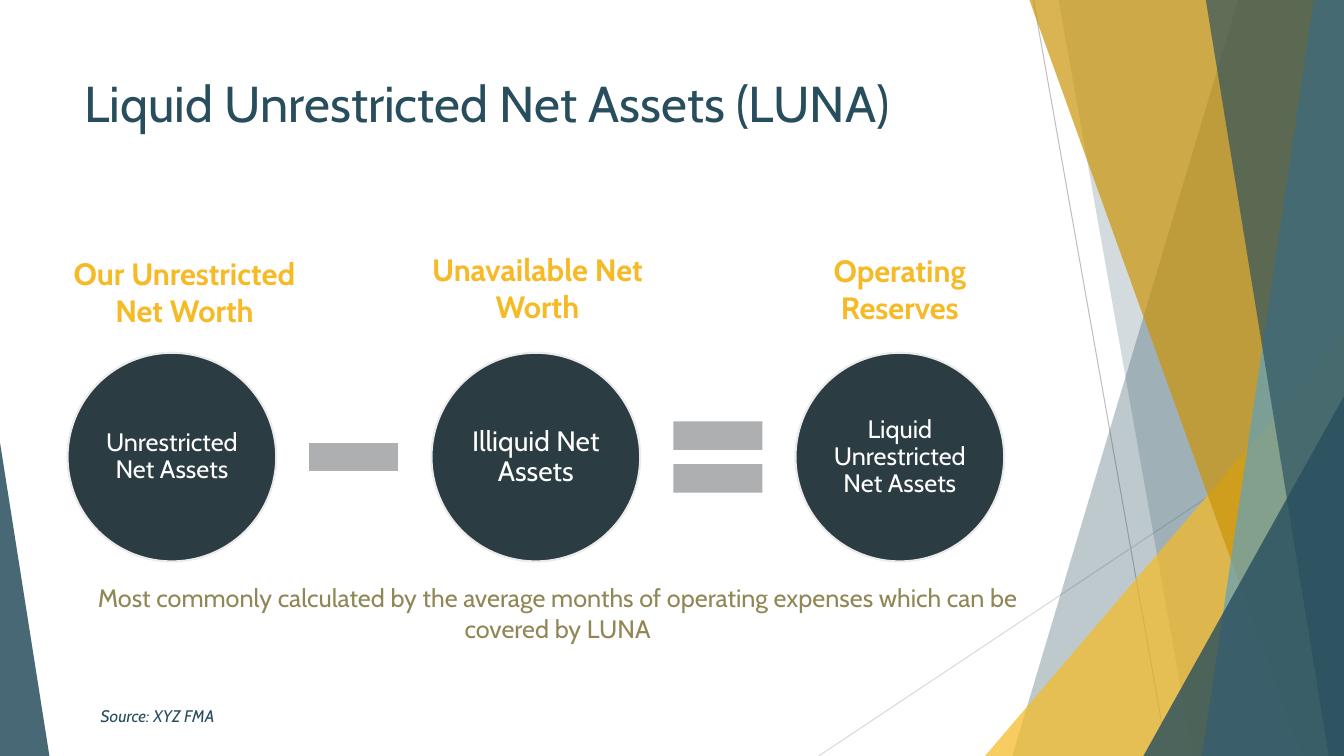
from lxml.etree import SubElement
from pptx import Presentation
from pptx.dml.color import RGBColor
from pptx.enum.shapes import MSO_CONNECTOR, MSO_SHAPE
from pptx.enum.text import MSO_ANCHOR, PP_ALIGN
from pptx.oxml.ns import qn
from pptx.util import Inches, Pt

TEAL = RGBColor(0x28, 0x4E, 0x5E)
SKY = RGBColor(0x61, 0xA1, 0xBC)
GOLD = RGBColor(0xF5, 0xBA, 0x26)
DARK_GOLD = RGBColor(0xCB, 0x94, 0x09)
OLIVE = RGBColor(0x91, 0x86, 0x55)
SLATE = RGBColor(0x2C, 0x3C, 0x43)
GREY = RGBColor(0xAD, 0xAF, 0xB0)
RIM = RGBColor(0xEB, 0xEB, 0xEB)
RULE = RGBColor(0xBF, 0xBF, 0xBF)
PALE_RULE = RGBColor(0xD9, 0xD9, 0xD9)
WHITE = RGBColor(0xFF, 0xFF, 0xFF)

WIDTH, HEIGHT = 13.33, 7.5


class SlideBuilder:
    font = "Cabin"

    def __init__(self, slide):
        self.s = slide

    def line(self, start, end, color):
        ends = [Inches(v) for v in (*start, *end)]
        c = self.s.shapes.add_connector(MSO_CONNECTOR.STRAIGHT, *ends)
        c.line.color.rgb = color
        c.line.width = Pt(0.75)
        SubElement(c._element.spPr, qn("a:effectLst"))

    def paint(self, sp, color, opacity=100):
        sp.shadow.inherit = False
        sp.fill.solid()
        sp.fill.fore_color.rgb = color
        sp.line.fill.background()
        if opacity < 100:
            clr = sp._element.spPr.find(qn("a:solidFill"))[0]
            SubElement(clr, qn("a:alpha"), val=str(opacity * 1000))

    def shape(self, kind, box, color, opacity=100, adj=None):
        sp = self.s.shapes.add_shape(kind, *[Inches(v) for v in box])
        if adj is not None:
            sp.adjustments[0] = adj
        self.paint(sp, color, opacity)
        return sp

    def band(self, top_x, bottom_x, color, opacity):
        """Full-height band from a slanted left edge to the slide's right edge."""
        corners = [(WIDTH, 0), (WIDTH, HEIGHT), (bottom_x, HEIGHT)]
        fb = self.s.shapes.build_freeform(Inches(top_x), 0)
        fb.add_line_segments([(Inches(x), Inches(y)) for x, y in corners])
        self.paint(fb.convert_to_shape(), color, opacity)

    def fill_text(self, tf, text, size, color, align=PP_ALIGN.CENTER,
                  anchor=MSO_ANCHOR.TOP, bold=False, italic=False):
        tf.word_wrap = True
        tf.vertical_anchor = anchor
        p = tf.paragraphs[0]
        p.alignment = align
        r = p.add_run()
        r.text = text
        r.font.name = self.font
        r.font.size = Pt(size)
        r.font.color.rgb = color
        r.font.bold = bold
        r.font.italic = italic
        return p

    def text(self, box, text, size, color, **style):
        sp = self.s.shapes.add_textbox(*[Inches(v) for v in box])
        self.fill_text(sp.text_frame, text, size, color, **style)

    def circle(self, left, top, size, text, points):
        sp = self.shape(MSO_SHAPE.OVAL, (left, top, size, size), SLATE)
        sp.line.color.rgb = RIM
        sp.line.width = Pt(1.5)
        tf = sp.text_frame
        tf.margin_left = tf.margin_right = Inches(0.03)
        tf.margin_top = tf.margin_bottom = Inches(0.03)
        p = self.fill_text(tf, text, points, WHITE, anchor=MSO_ANCHOR.MIDDLE)
        p.line_spacing = 0.9


def main():
    prs = Presentation()
    prs.slide_width, prs.slide_height = Inches(WIDTH), Inches(HEIGHT)
    b = SlideBuilder(prs.slides.add_slide(prs.slide_layouts[6]))

    # Background facets
    triangle = MSO_SHAPE.ISOSCELES_TRIANGLE
    b.line((10.25, 0), (11.58, HEIGHT), RULE)
    b.line((WIDTH, 4.03), (8.12, HEIGHT), PALE_RULE)
    b.band(12.28, 10.04, TEAL, 30)
    b.band(10.5, 11.83, TEAL, 20)
    b.shape(triangle, (9.77, 3.33, 3.56, 4.17), GOLD, 72, adj=1)
    b.band(10.21, 12.91, DARK_GOLD, 70)
    b.band(13.03, 11.92, SKY, 70)
    b.band(11.96, 13.18, TEAL, 65)
    b.shape(triangle, (11.34, 3.93, 1.99, 3.57), TEAL, 80, adj=1)
    b.shape(triangle, (0, 4.39, 0.49, 3.11), TEAL, 85, adj=0)

    # Title
    b.text((0.74, 0.67, 9.4, 1.44), "Liquid Unrestricted Net Assets (LUNA)",
           36, TEAL, align=PP_ALIGN.LEFT)

    # Equation: circles at an equal pitch, an operator after the first two
    left, top, size, pitch, sign = 0.67, 3.5, 2.07, 3.61, 1.2
    terms = [
        ("Unrestricted Net Assets", 18, MSO_SHAPE.MATH_MINUS),
        ("Illiquid Net Assets", 20, MSO_SHAPE.MATH_EQUAL),
        ("Liquid Unrestricted Net Assets", 18, None),
    ]
    for i, (term, points, operator) in enumerate(terms):
        x = left + i * pitch
        b.circle(x, top, size, term, points)
        if operator is not None:
            sign_x = x + (size + pitch - sign) / 2
            sign_y = top + (size - sign) / 2
            b.shape(operator, (sign_x, sign_y, sign, sign), GREY)

    # Headings above the circles
    headings = [
        (0.46, 2.48, 2.74, "Our Unrestricted Net Worth"),
        (4.07, 2.44, 2.52, "Unavailable Net Worth"),
        (7.61, 2.45, 2.63, "Operating Reserves"),
    ]
    for x, y, width, heading in headings:
        b.text((x, y, width, 0.84), heading, 22, GOLD, bold=True)

    # Explanation and source
    b.text((0.67, 5.93, 9.72, 0.3),
           "Most commonly calculated by the average months of operating "
           "expenses which can be covered by LUNA",
           18, OLIVE, anchor=MSO_ANCHOR.MIDDLE)
    b.text((0.9, 6.95, 3.47, 0.3), "Source: XYZ FMA", 12, TEAL,
           align=PP_ALIGN.LEFT, anchor=MSO_ANCHOR.MIDDLE, italic=True)

    prs.save("out.pptx")


if __name__ == "__main__":
    main()
